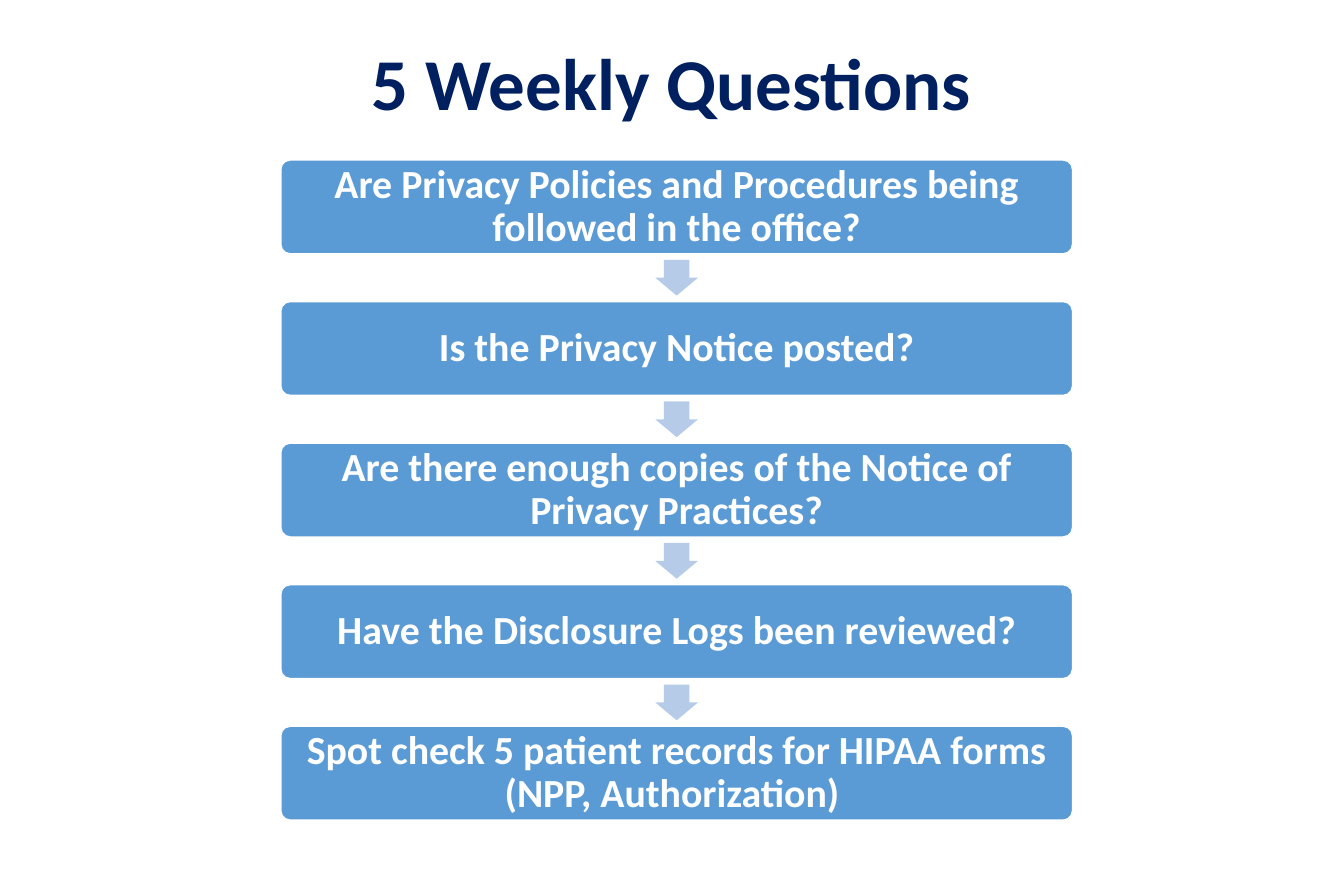
from dataclasses import dataclass

from pptx import Presentation
from pptx.dml.color import RGBColor
from pptx.enum.shapes import MSO_SHAPE
from pptx.enum.text import MSO_ANCHOR, MSO_AUTO_SIZE, PP_ALIGN
from pptx.util import Cm, Pt

ROUND_BOX = MSO_SHAPE.ROUNDED_RECTANGLE
DOWN_ARROW = MSO_SHAPE.DOWN_ARROW
MIDDLE = MSO_ANCHOR.MIDDLE
CENTER = PP_ALIGN.CENTER
NO_AUTOFIT = MSO_AUTO_SIZE.NONE
TITLE_ONLY = 5


@dataclass(frozen=True)
class Theme:
    """Hold the colours, font and type sizes of the slide."""
    font: str = "Calibri"
    title: str = "002060"
    box: str = "5B9BD5"
    arrow: str = "B5CBE7"
    white: str = "FFFFFF"
    title_size: int = 44
    box_size: int = 24


THEME = Theme()
QUESTIONS = (
    "Are Privacy Policies and Procedures being followed in the office?",
    "Is the Privacy Notice posted?",
    "Are there enough copies of the Notice of Privacy Practices?",
    "Have the Disclosure Logs been reviewed?",
    "Spot check 5 patient records for HIPAA forms (NPP, Authorization) ",
)
BOX_LEFT, BOX_TOP = Cm(5.97), Cm(3.4)
BOX_WIDTH, BOX_HEIGHT = Cm(16.84), Cm(2)
PITCH = Cm(3.01)
ARROW_WIDTH, ARROW_HEIGHT = Cm(0.91), Cm(0.76)


def write_text(sp, text, *, size, color, inset):
    """Set bold centred text in a shape."""
    tf = sp.text_frame
    tf.word_wrap = True
    tf.auto_size = NO_AUTOFIT
    tf.vertical_anchor = MIDDLE
    tf.margin_left = tf.margin_right = inset
    tf.margin_top = tf.margin_bottom = 0
    p = tf.paragraphs[0]
    p.alignment = CENTER
    p.line_spacing = 0.9
    r = p.add_run()
    r.text = text
    r.font.name = THEME.font
    r.font.size = Pt(size)
    r.font.bold = True
    r.font.color.rgb = RGBColor.from_string(color)


def add_title(slide, text):
    """Place and fill the title placeholder."""
    sp = slide.shapes.title
    sp.left, sp.top, sp.width, sp.height = Cm(1.96), 0, Cm(24.64), Cm(3.68)
    write_text(sp, text, size=THEME.title_size, color=THEME.title, inset=Cm(0.25))


def add_filled(slide, kind, left, top, width, height, *, fill, adjustments):
    """Add a flat filled preset shape without an outline."""
    sp = slide.shapes.add_shape(kind, left, top, width, height)
    sp.shadow.inherit = False
    sp.fill.solid()
    sp.fill.fore_color.rgb = RGBColor.from_string(fill)
    sp.line.fill.background()
    for i, value in enumerate(adjustments):
        sp.adjustments[i] = value
    return sp


def add_question(slide, text, top):
    """Add one question box."""
    sp = add_filled(slide, ROUND_BOX, BOX_LEFT, top, BOX_WIDTH, BOX_HEIGHT,
                    fill=THEME.box, adjustments=[0.1])
    sp.line.color.rgb = RGBColor.from_string(THEME.white)
    sp.line.width = Pt(1)
    write_text(sp, text, size=THEME.box_size, color=THEME.white, inset=Cm(0.25))


def add_arrow(slide, box_top):
    """Add the arrow centred in the gap below a box."""
    left = BOX_LEFT + (BOX_WIDTH - ARROW_WIDTH) // 2
    top = box_top + (BOX_HEIGHT + PITCH - ARROW_HEIGHT) // 2
    add_filled(slide, DOWN_ARROW, left, top, ARROW_WIDTH, ARROW_HEIGHT,
               fill=THEME.arrow, adjustments=[0.6, 0.5])


def main():
    """Build the slide and save it."""
    prs = Presentation()
    prs.slide_width, prs.slide_height = Cm(28.58), Cm(19.05)
    slide = prs.slides.add_slide(prs.slide_layouts[TITLE_ONLY])
    add_title(slide, "5 Weekly Questions")
    for i, question in enumerate(QUESTIONS):
        top = BOX_TOP + i * PITCH
        add_question(slide, question, top)
        if i < len(QUESTIONS) - 1:
            add_arrow(slide, top)
    prs.save("out.pptx")


if __name__ == "__main__":
    main()
